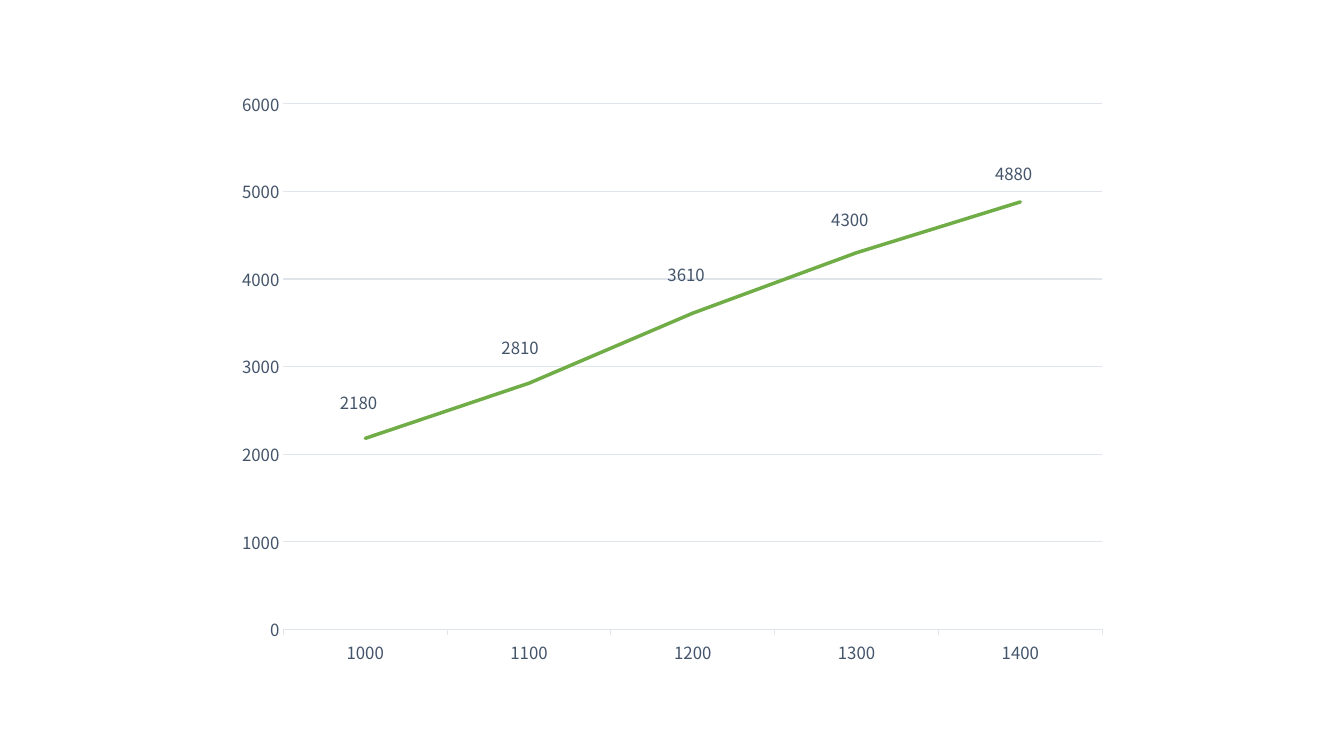
from lxml import etree
from pptx import Presentation
from pptx.chart.data import CategoryChartData
from pptx.dml.color import RGBColor
from pptx.enum.chart import XL_CHART_TYPE as ChartType
from pptx.enum.chart import XL_LABEL_POSITION as LabelPosition
from pptx.enum.chart import XL_MARKER_STYLE as MarkerStyle
from pptx.enum.chart import XL_TICK_MARK as TickMark
from pptx.oxml.ns import qn
from pptx.util import Cm, Pt

COLORS = {"text": "44546A", "grid": "E0E5EB", "line": "70AD47"}
FONT = "Noto Sans CJK SC"
CATEGORIES = ["1000", "1100", "1200", "1300", "1400"]
VALUES = [2180, 2810, 3610, 4300, 4880]
# Label offsets from each point, in percent of the chart size
LABEL_SHIFTS = [(-0.75, -6.1), (-1, -6), (-0.75, -6.6), (-0.75, -5.6),
                (-0.75, -4.8)]
C15 = "http://schemas.microsoft.com/office/drawing/2012/chart"
LABELS_URI = "{CE6537A1-D6FC-4f65-9D91-7224C49458BB}"


def format_text(font, size=12, color="text"):
    font.name = FONT
    font.size = Pt(size)
    font.color.rgb = RGBColor.from_string(COLORS[color])


def format_line(line, color, width=0.75):
    line.color.rgb = RGBColor.from_string(COLORS[color])
    line.width = Pt(width)


def make_layout(modes=None, **percents):
    """Return a c:layout element; lengths are percent of the chart size."""
    layout = etree.Element(qn("c:layout"))
    manual = etree.SubElement(layout, qn("c:manualLayout"))
    lengths = {name: value / 100 for name, value in percents.items()}
    for name, value in {**(modes or {}), **lengths}.items():
        etree.SubElement(manual, qn(f"c:{name}")).set("val", str(value))
    return layout


def place_plot(plot_area):
    for layout in plot_area.findall(qn("c:layout")):
        plot_area.remove(layout)
    modes = {"layoutTarget": "inner", "xMode": "edge", "yMode": "edge"}
    plot_area.insert(0, make_layout(modes, x=6.65, y=4.1, w=91.4, h=88))


def format_axes(chart):
    for axis in (chart.category_axis, chart.value_axis):
        format_text(axis.tick_labels.font)
        axis.minor_tick_mark = TickMark.NONE
    chart.category_axis.major_tick_mark = TickMark.OUTSIDE
    format_line(chart.category_axis.format.line, "grid")

    values = chart.value_axis
    values.major_tick_mark = TickMark.NONE
    values.minimum_scale, values.maximum_scale = 0, 6000
    values.major_unit = 1000
    values.format.line.fill.background()
    format_line(values.major_gridlines.format.line, "grid")


def hide_leader_lines(labels):
    for leader in labels.findall(qn("c:showLeaderLines")):
        leader.set("val", "0")
    extensions = etree.SubElement(labels, qn("c:extLst"))
    extension = etree.SubElement(extensions, qn("c:ext"), uri=LABELS_URI)
    etree.SubElement(extension, f"{{{C15}}}showLeaderLines",
                     nsmap={"c15": C15}).set("val", "0")


def format_series(series):
    series.smooth = False
    series.marker.style = MarkerStyle.NONE
    format_line(series.format.line, "line", width=2.5)
    series.format.line._get_or_add_ln().set("cap", "rnd")

    series.data_labels.show_value = True
    series.data_labels.position = LabelPosition.CENTER
    format_text(series.data_labels.font)
    for index in range(len(VALUES)):
        label = series.points[index].data_label
        format_text(label.font)
        label.position = LabelPosition.CENTER

    labels = series._element.find(qn("c:dLbls"))
    for label, (x, y) in zip(labels.findall(qn("c:dLbl")), LABEL_SHIFTS):
        label.insert(1, make_layout(x=x, y=y))
    hide_leader_lines(labels)


def add_line_chart(page, left, top, width, height):
    data = CategoryChartData()
    data.categories = CATEGORIES
    data.add_series("Series 1", VALUES)
    chart = page.shapes.add_chart(
        ChartType.LINE, left, top, width, height, data).chart
    chart.has_title = False
    chart.has_legend = False
    format_text(chart.font)
    place_plot(chart._chartSpace.find(f".//{qn('c:plotArea')}"))
    format_axes(chart)
    chart.plots[0].vary_by_categories = False
    format_series(chart.plots[0].series[0])


def main():
    deck = Presentation()
    deck.slide_width, deck.slide_height = Cm(33.87), Cm(19.05)
    page = deck.slides.add_slide(deck.slide_layouts[6])
    add_line_chart(page, Cm(5.64), Cm(2), Cm(22.58), Cm(15.05))
    deck.save("out.pptx")


if __name__ == "__main__":
    main()
